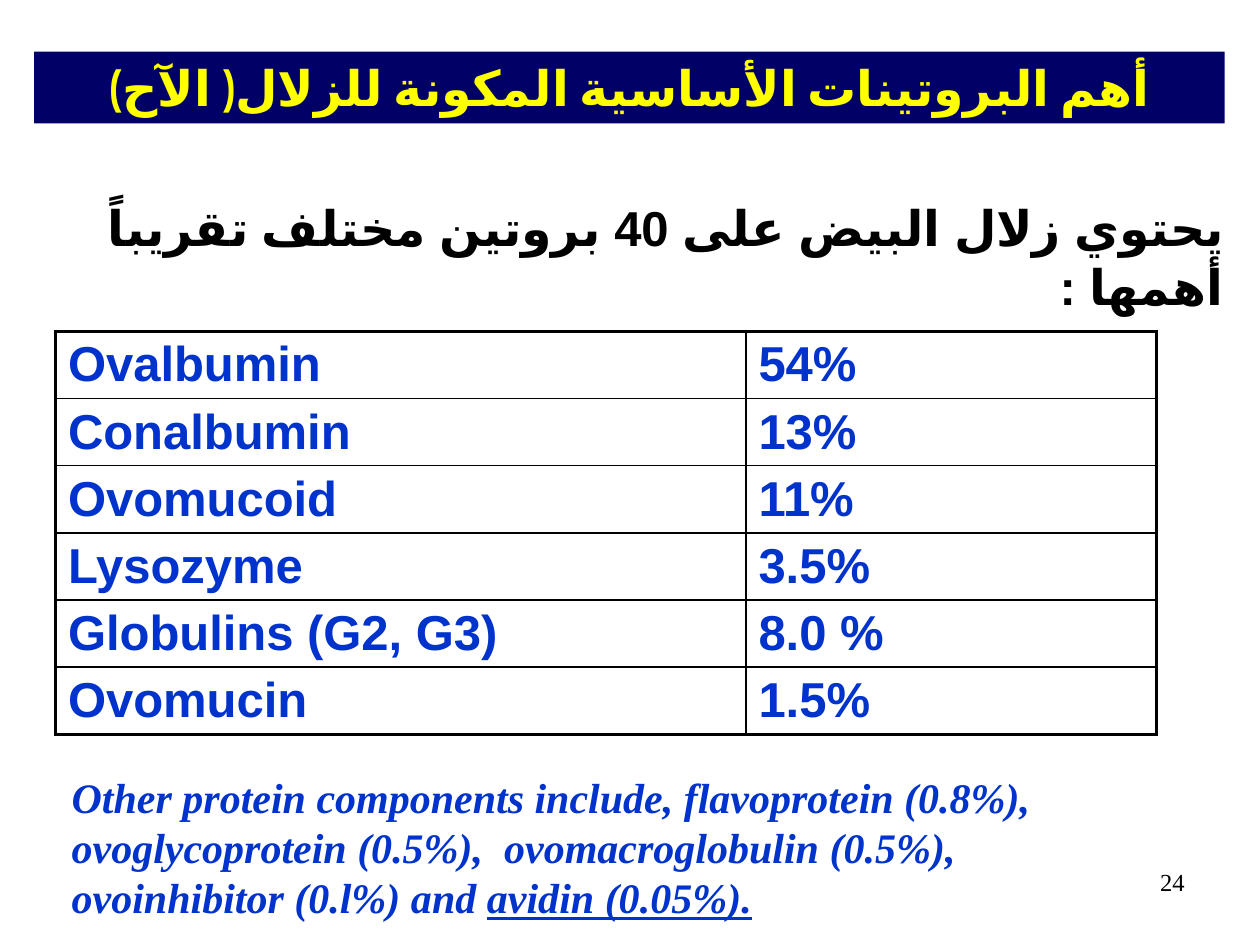
import pptx
import pptx.util
import pptx.dml.color
import pptx.enum.lang
import pptx.enum.text
import pptx.oxml
import pptx.oxml.ns
from lxml import etree

Inches, Pt = pptx.util.Inches, pptx.util.Pt
RGBColor = pptx.dml.color.RGBColor
PP_ALIGN = pptx.enum.text.PP_ALIGN
ANCHOR = pptx.enum.text.MSO_ANCHOR
LANGUAGE = pptx.enum.lang.MSO_LANGUAGE_ID
qn = pptx.oxml.ns.qn

NAVY = RGBColor(0x00, 0x00, 0x66)
YELLOW = RGBColor(0xFF, 0xFF, 0x00)
BLUE = RGBColor(0x00, 0x33, 0xCC)
BLACK = RGBColor(0x00, 0x00, 0x00)

PROTEINS = [
    ("Ovalbumin", "54%"),
    ("Conalbumin", "13%"),
    ("Ovomucoid", "11%"),
    ("Lysozyme", "3.5%"),
    ("Globulins (G2, G3)", "8.0 %"),
    ("Ovomucin", "1.5%"),
]


def style_run(run, size, face, color, bold=True, italic=False):
    font = run.font
    font.size, font.name, font.bold, font.italic = Pt(size), face, bold, italic
    font.color.rgb = color


def style_arabic_run(run, size, face, color):
    style_run(run, size, face, color)
    run.font.language_id = LANGUAGE.ARABIC
    # Arabic letters take the complex-script face
    etree.SubElement(run._r.get_or_add_rPr(), qn("a:cs")).set("typeface", face)


def add_text(slide, left, top, width, height):
    frame = slide.shapes.add_textbox(left, top, width, height).text_frame
    frame.word_wrap = True
    return frame.paragraphs[0]


def add_banner(slide, left, top, width, height):
    banner = slide.shapes.title
    banner.left, banner.top, banner.width, banner.height = left, top, width, height
    banner.fill.solid()
    banner.fill.fore_color.rgb = NAVY
    frame = banner.text_frame
    frame.text = "أهم البروتينات الأساسية المكونة للزلال( الآح)"
    frame.auto_size = pptx.enum.text.MSO_AUTO_SIZE.NONE
    frame.vertical_anchor = ANCHOR.TOP
    heading = frame.paragraphs[0]
    heading.alignment = PP_ALIGN.CENTER
    style_arabic_run(heading.runs[0], 28, "Cabin", YELLOW)


def add_intro(slide, left, top, width, height):
    intro = add_text(slide, left, top, width, height)
    intro.text = "يحتوي زلال البيض على 40 بروتين مختلف تقريباً أهمها :"
    intro.alignment = PP_ALIGN.RIGHT
    intro._p.get_or_add_pPr().set("rtl", "1")
    style_arabic_run(intro.runs[0], 28, "Arial", BLACK)


def set_borders(cell, widths):
    """Draw black cell borders; widths maps L, R, T and B to points."""
    properties = cell._tc.get_or_add_tcPr()
    for index, (side, width) in enumerate(widths.items()):
        line = etree.Element(qn(f"a:ln{side}"), w=str(Pt(width)))
        fill = etree.SubElement(line, qn("a:solidFill"))
        etree.SubElement(fill, qn("a:srgbClr"), val=str(BLACK))
        properties.insert(index, line)


def add_protein_table(slide, left, top, width, height):
    row_count = len(PROTEINS)
    table = slide.shapes.add_table(row_count, 2, left, top, width, height).table
    table.first_row = table.horz_banding = False
    table.columns[0].width = Inches(5.48)
    table.columns[1].width = width - Inches(5.48)
    for row_index, values in enumerate(PROTEINS):
        table.rows[row_index].height = height // row_count
        for column_index, value in enumerate(values):
            cell = table.cell(row_index, column_index)
            cell.text = value
            cell.margin_top, cell.margin_bottom = Inches(0.05), Inches(0.01)
            cell.fill.background()
            style_run(cell.text_frame.paragraphs[0].runs[0], 28, "Arial", BLUE)
            # Heavy outer frame, thin inner grid
            outer = {"L": column_index == 0, "R": column_index == 1,
                     "T": row_index == 0, "B": row_index == row_count - 1}
            set_borders(cell, {side: 2.25 if edge else 1
                               for side, edge in outer.items()})


def add_other_proteins(slide, left, top, width, height):
    note = add_text(slide, left, top, width, height)
    note.text = ("Other protein components include, flavoprotein (0.8%), "
                 "ovoglycoprotein (0.5%),  ovomacroglobulin (0.5%), "
                 "ovoinhibitor (0.l%) and ")
    avidin = note.add_run()
    avidin.text = "avidin (0.05%)."
    for run in note.runs:
        style_run(run, 24, "Times New Roman", BLUE, italic=True)
    avidin.font.underline = True


def add_page_number(slide, left, top, width, height):
    number = add_text(slide, left, top, width, height)
    number.text = "24"
    number.alignment = PP_ALIGN.RIGHT
    style_run(number.runs[0], 14, "Times New Roman", BLACK, bold=False)


def main():
    deck = pptx.Presentation()
    deck.slide_width, deck.slide_height = Inches(10), Inches(7.5)
    slide = deck.slides.add_slide(deck.slide_layouts[5])  # title only

    add_banner(slide, Inches(0.27), Inches(0.41), Inches(9.45), Inches(0.57))
    add_intro(slide, Inches(0.2), Inches(1.52), Inches(9.61), Inches(0.57))
    add_protein_table(slide, Inches(0.44), Inches(2.63), Inches(8.74), Inches(3.2))
    add_other_proteins(slide, Inches(0.47), Inches(6.07), Inches(8.78), Inches(1.31))
    add_page_number(slide, Inches(7.17), Inches(6.83), Inches(2.33), Inches(0.52))

    deck.save("out.pptx")


if __name__ == "__main__":
    main()
